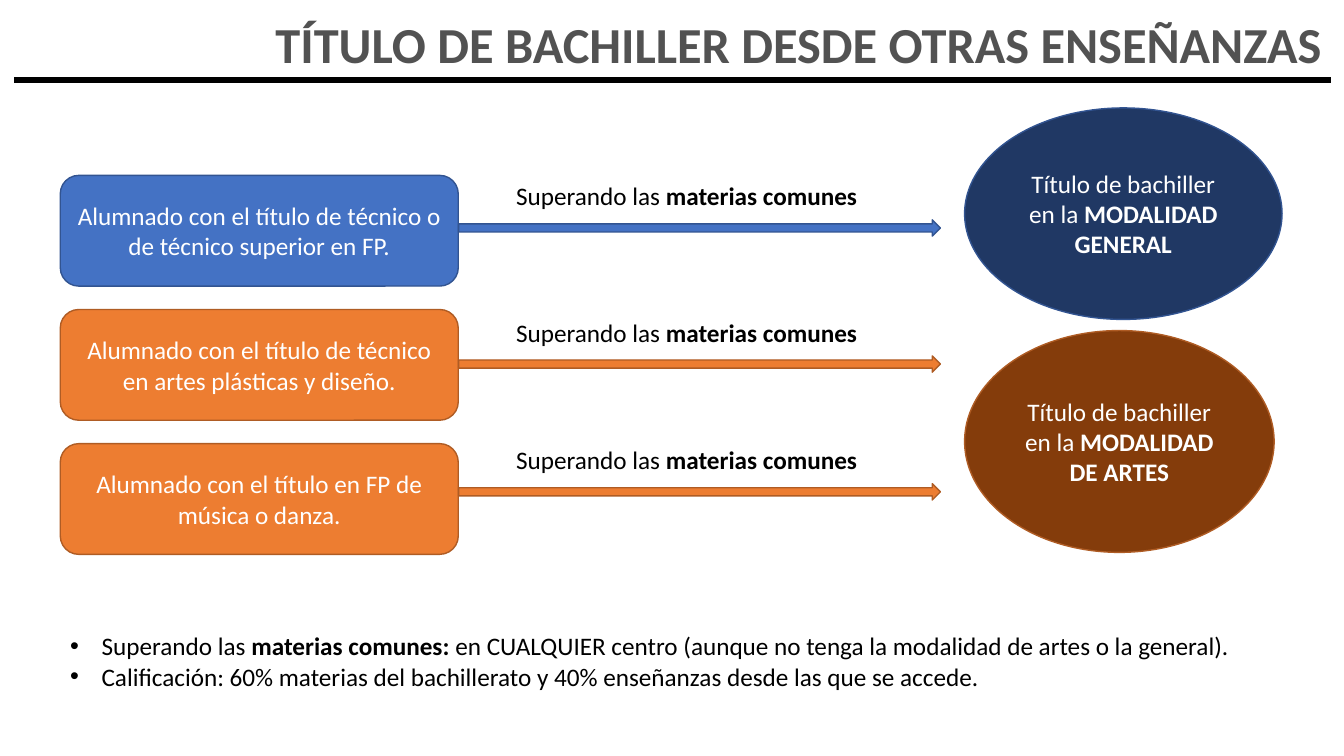
from lxml import etree
from pptx import Presentation
from pptx.dml.color import RGBColor
from pptx.enum import shapes, text
from pptx.oxml import ns
from pptx.util import Cm, Pt

BLUE, BLUE_EDGE, NAVY = "4472C4", "325491", "203864"
ORANGE, ORANGE_EDGE, BROWN = "ED7D31", "AF5C24", "843C0B"
SHAPE = shapes.MSO_SHAPE


def write(frame, paragraphs, color="000000", size=18, align=text.PP_ALIGN.CENTER):
    """Fill a text frame; each paragraph is a list of spans, every second one bold."""
    frame.word_wrap = True
    for index, spans in enumerate(paragraphs):
        para = frame.add_paragraph() if index else frame.paragraphs[0]
        para.alignment = align
        para.font.name, para.font.size = "Calibri", Pt(size)
        para.font.color.rgb = RGBColor.from_string(color)
        for position, words in enumerate(spans):
            span = para.add_run()
            span.text = words
            if position % 2:
                span.font.bold = True


def add_figure(kind, left, top, width, height, fill, edge):
    figure = page.shapes.add_shape(kind, Cm(left), Cm(top), Cm(width), Cm(height))
    figure.shadow.inherit = False
    figure.fill.solid()
    figure.fill.fore_color.rgb = RGBColor.from_string(fill)
    figure.line.color.rgb = RGBColor.from_string(edge)
    figure.line.width = Pt(1)
    figure.text_frame.vertical_anchor = text.MSO_ANCHOR.MIDDLE
    return figure


deck = Presentation()
deck.slide_width, deck.slide_height = Cm(33.87), Cm(19.05)
page = deck.slides.add_slide(deck.slide_layouts[6])

# Title and rule
title = page.shapes.add_textbox(Cm(3.53), Cm(0.38), Cm(30.05), Cm(1.93)).text_frame
write(title, [["TÍTULO DE BACHILLER DESDE OTRAS ENSEÑANZAS"]], "525252", 36, text.PP_ALIGN.RIGHT)
title.paragraphs[0].font.bold = True
title.paragraphs[0].line_spacing = 0.9

rule = page.shapes.add_connector(shapes.MSO_CONNECTOR.STRAIGHT, Cm(0.36), Cm(2.01), Cm(33.55), Cm(2.01))
rule.line.color.rgb = RGBColor.from_string("000000")
rule.line.width = Pt(4.25)
etree.SubElement(rule._element.spPr, ns.qn("a:effectLst"))

# One row per origin: box, label and arrow
routes = [
    ("Alumnado con el título de técnico o de técnico superior en FP.", BLUE, BLUE_EDGE, 4.42, 5.54),
    ("Alumnado con el título de técnico en artes plásticas y diseño.", ORANGE, ORANGE_EDGE, 7.87, 8.97),
    ("Alumnado con el título en FP de música o danza.", ORANGE, ORANGE_EDGE, 11.07, 12.19),
]
for row, (origin, fill, edge, label_top, arrow_top) in enumerate(routes):
    box = add_figure(SHAPE.ROUNDED_RECTANGLE, 1.52, 4.42 + 3.38 * row, 10.03, 2.79, fill, edge)
    write(box.text_frame, [[origin]], "FFFFFF")
    label = page.shapes.add_textbox(Cm(12.29), Cm(label_top), Cm(10.03), Cm(1.02))
    write(label.text_frame, [["Superando las ", "materias comunes"]])
    add_figure(SHAPE.RIGHT_ARROW, 11.56, arrow_top, 12.14, 0.41, fill, edge)

# Resulting qualifications
for branch, top, width, height, fill, edge in [
    ("MODALIDAD GENERAL", 2.72, 8, 5.33, NAVY, BLUE_EDGE),
    ("MODALIDAD DE ARTES", 8.33, 7.8, 5.59, BROWN, ORANGE_EDGE),
]:
    oval = add_figure(SHAPE.OVAL, 24.31, top, width, height, fill, edge)
    write(oval.text_frame, [["Título de bachiller en la ", branch]], "FFFFFF")

# Bulleted notes
notes = page.shapes.add_textbox(Cm(1.52), Cm(15.77), Cm(31.24), Cm(1.8)).text_frame
write(notes, [
    ["Superando las ", "materias comunes: ",
     "en CUALQUIER centro (aunque no tenga la modalidad de artes o la general)."],
    ["Calificación: 60% materias del bachillerato y 40% enseñanzas desde las que se accede."],
], align=text.PP_ALIGN.LEFT)
for para in notes.paragraphs:
    properties = para._p.get_or_add_pPr()
    properties.set("marL", str(Cm(0.79)))
    properties.set("indent", str(-Cm(0.79)))
    bullet_font = etree.Element(ns.qn("a:buFont"), typeface="Arial")
    bullet = etree.Element(ns.qn("a:buChar"), char="•")
    properties.insert(0, bullet_font)
    properties.insert(1, bullet)

deck.save("out.pptx")
